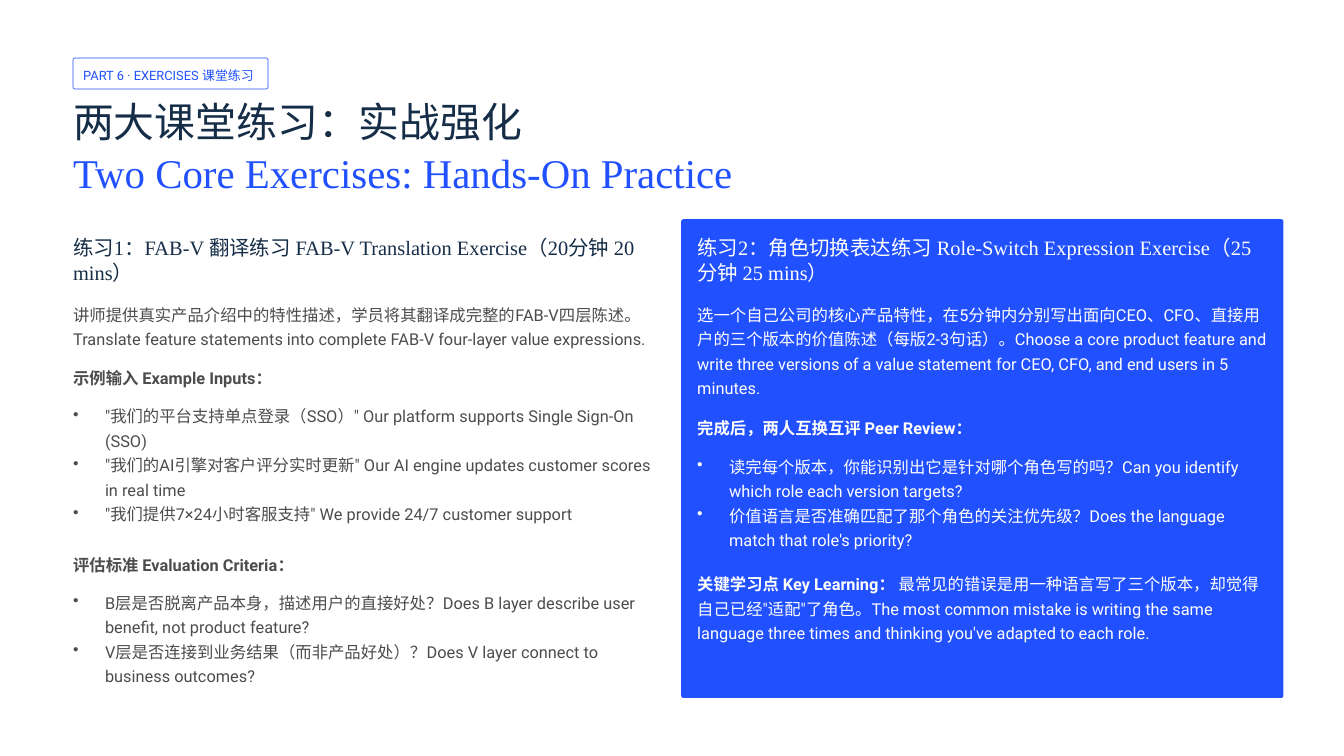
from lxml import etree
from pptx import Presentation
from pptx.dml.color import RGBColor
from pptx.enum import shapes
from pptx.oxml import ns
from pptx.util import Inches, Pt

COLOURS = {"white": "FFFFFF", "blue": "2150FE", "navy": "152D47", "grey": "4C4C4D"}
SERIF, SANS = "Times New Roman", "Roboto"
INDENT = 0.38


def colour(name):
    return RGBColor.from_string(COLOURS[name])


def add_bullet(para):
    props = para._p.get_or_add_pPr()
    props.set("marL", str(Inches(INDENT)))
    props.set("indent", str(-Inches(INDENT)))
    etree.SubElement(props, ns.qn("a:buChar")).set("char", "•")


def add_text(page, box, paras, font=SANS, size=14, line=21, ink="grey",
             bold=False, bullets=False, wrap=True):
    """Each paragraph is a list of (text, overrides) spans or a plain string."""
    frame = page.shapes.add_textbox(*map(Inches, box)).text_frame
    frame.margin_left = frame.margin_right = frame.margin_top = frame.margin_bottom = 0
    frame.word_wrap = wrap
    for index, spans in enumerate(paras):
        para = frame.add_paragraph() if index else frame.paragraphs[0]
        para.line_spacing = Pt(line)
        if bullets:
            add_bullet(para)
        for words, changes in [(spans, {})] if isinstance(spans, str) else spans:
            span = para.add_run()
            span.text = words
            span.font.name = font
            span.font.size = Pt(size)
            span.font.bold = changes.get("bold", bold)
            span.font.color.rgb = colour(changes.get("ink", ink))


def add_rounded(page, box, radius, fill=None, line=None):
    shape = page.shapes.add_shape(shapes.MSO_SHAPE.ROUNDED_RECTANGLE, *map(Inches, box))
    shape.adjustments[0] = radius
    shape.shadow.inherit = False
    if fill:
        shape.fill.solid()
        shape.fill.fore_color.rgb = colour(fill)
    else:
        shape.fill.background()
    if line:
        shape.line.color.rgb = colour(line)
        shape.line.width = Pt(0.6)
    else:
        shape.line.fill.background()


def add_header(page, left, top):
    add_rounded(page, (left, top, 2.32, 0.37), 0.063, line="blue")
    add_text(page, (left + 0.12, top + 0.06, 2.07, 0.24), ["PART 6 · EXERCISES 课堂练习"],
             size=11, line=17, ink="blue", wrap=False)
    add_text(page, (left, top + 0.44, 7.9, 1.22),
             ["两大课堂练习：实战强化", [("Two Core Exercises: Hands-On Practice", {"ink": "blue"})]],
             font=SERIF, size=35, line=43.5, ink="navy")


def add_exercise(page, left, top, width, title, parts, title_ink, ink):
    """Place a title, then parts given as (offset, height, kind, paragraphs)."""
    add_text(page, (left, top, width, 0.61), [title],
             font=SERIF, size=17.5, line=21.5, ink=title_ink)
    for offset, height, kind, paras in parts:
        add_text(page, (left, top + offset, width, height), paras, ink=ink,
                 bold=kind == "label", bullets=kind == "bullets", wrap=kind != "label")


FAB_TITLE = "练习1：FAB-V 翻译练习 FAB-V Translation Exercise（20分钟 20 mins）"
FAB_PARTS = [
    (0.78, 0.59, "body", [
        "讲师提供真实产品介绍中的特性描述，学员将其翻译成完整的FAB-V四层陈述。"
        "Translate feature statements into complete FAB-V four-layer value expressions."]),
    (1.54, 0.3, "label", ["示例输入 Example Inputs："]),
    (1.99, 1.61, "bullets", [
        '"我们的平台支持单点登录（SSO）" Our platform supports Single Sign-On (SSO)',
        '"我们的AI引擎对客户评分实时更新" Our AI engine updates customer scores in real time',
        '"我们提供7×24小时客服支持" We provide 24/7 customer support']),
    (3.76, 0.3, "label", ["评估标准 Evaluation Criteria："]),
    (4.21, 1.25, "bullets", [
        "B层是否脱离产品本身，描述用户的直接好处？"
        "Does B layer describe user benefit, not product feature?",
        "V层是否连接到业务结果（而非产品好处）？Does V layer connect to business outcomes?"]),
]

ROLE_TITLE = "练习2：角色切换表达练习 Role-Switch Expression Exercise（25分钟 25 mins）"
ROLE_PARTS = [
    (0.78, 1.19, "body", [
        "选一个自己公司的核心产品特性，在5分钟内分别写出面向CEO、CFO、直接用户的三个版本的价值陈述"
        "（每版2-3句话）。Choose a core product feature and write three versions of a value "
        "statement for CEO, CFO, and end users in 5 minutes."]),
    (2.13, 0.3, "label", ["完成后，两人互换互评 Peer Review："]),
    (2.59, 1.25, "bullets", [
        "读完每个版本，你能识别出它是针对哪个角色写的吗？"
        "Can you identify which role each version targets?",
        "价值语言是否准确匹配了那个角色的关注优先级？"
        "Does the language match that role's priority?"]),
    (3.99, 0.89, "body", [[
        ("关键学习点 Key Learning：", {"bold": True}),
        (' 最常见的错误是用一种语言写了三个版本，却觉得自己已经"适配"了角色。'
         "The most common mistake is writing the same language three times and thinking "
         "you've adapted to each role.", {})]]),
]


def main():
    deck = Presentation()
    deck.slide_width, deck.slide_height = Inches(16), Inches(9)
    page = deck.slides.add_slide(deck.slide_layouts[6])
    page.background.fill.solid()
    page.background.fill.fore_color.rgb = colour("white")

    add_header(page, 0.87, 0.69)
    add_exercise(page, 0.87, 2.79, 6.89, FAB_TITLE, FAB_PARTS, "navy", "grey")
    add_rounded(page, (8.11, 2.61, 7.17, 5.7), 0.005, fill="blue")
    add_exercise(page, 8.3, 2.79, 6.78, ROLE_TITLE, ROLE_PARTS, "white", "white")
    deck.save("out.pptx")


if __name__ == "__main__":
    main()
